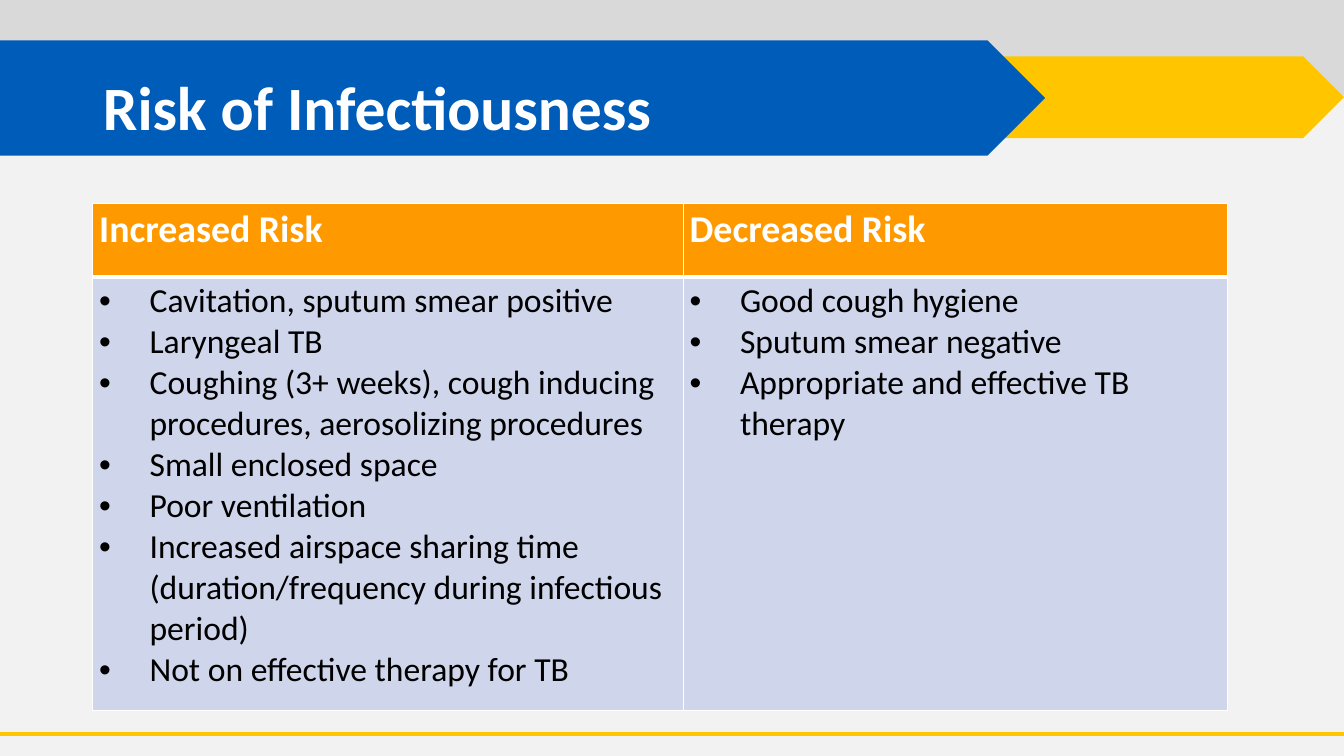
from lxml.etree import SubElement
from pptx import Presentation
from pptx.dml.color import RGBColor
from pptx.enum.shapes import MSO_CONNECTOR, MSO_SHAPE
from pptx.enum.text import MSO_ANCHOR, PP_ALIGN
from pptx.oxml.ns import qn
from pptx.util import Cm, Pt

COLORS = {
    "page": "F2F2F2", "band": "D9D9D9", "gold": "FFC600", "blue": "005CB9",
    "header": "FF9900", "body": "CFD5EA", "white": "FFFFFF", "black": "000000",
}
FONT = "Calibri"
WIDTH, HEIGHT = 33.87, 19.05
RISKS = {
    "Increased Risk": [
        "Cavitation, sputum smear positive",
        "Laryngeal TB",
        "Coughing (3+ weeks), cough inducing procedures, aerosolizing procedures",
        "Small enclosed space",
        "Poor ventilation",
        "Increased airspace sharing time (duration/frequency during infectious period)",
        "Not on effective therapy for TB",
    ],
    "Decreased Risk": [
        "Good cough hygiene",
        "Sputum smear negative",
        "Appropriate and effective TB therapy",
    ],
}


def rgb(name):
    return RGBColor.from_string(COLORS[name])


def add_span(para, text, size, color, bold=False):
    span = para.add_run()
    span.text = text
    span.font.name = FONT
    span.font.size = Pt(size)
    span.font.bold = bold
    span.font.color.rgb = rgb(color)


def add_block(page, kind, box, color):
    block = page.shapes.add_shape(kind, *map(Cm, box))
    block.shadow.inherit = False
    block.fill.solid()
    block.fill.fore_color.rgb = rgb(color)
    block.line.fill.background()


def add_banner(page, left, top, width, title):
    """Draw the grey band, the two arrows and the title."""
    add_block(page, MSO_SHAPE.RECTANGLE, (left, top, width, 2.41), "band")
    add_block(page, MSO_SHAPE.PENTAGON, (left + width - 15.87, top + 1.42, 15.87, 2.06), "gold")
    add_block(page, MSO_SHAPE.PENTAGON, (left, top + 1.02, 26.34, 2.9), "blue")

    heading = page.shapes.title
    heading.left, heading.top = Cm(left + 2.34), Cm(top + 1.83)
    heading.width, heading.height = Cm(29.21), Cm(3.68)
    heading.element.getparent().append(heading.element)  # in front of the arrows
    frame = heading.text_frame
    frame.word_wrap = True
    frame.vertical_anchor = MSO_ANCHOR.TOP
    para = frame.paragraphs[0]
    para.alignment = PP_ALIGN.LEFT
    para.line_spacing = 0.9
    add_span(para, title, 44, "white", bold=True)


def add_footer_rule(page, left, top, width):
    rule = page.shapes.add_connector(
        MSO_CONNECTOR.STRAIGHT, Cm(left), Cm(top), Cm(left + width), Cm(top))
    rule.line.color.rgb = rgb("gold")
    rule.line.width = Pt(3)
    SubElement(rule.element.spPr, qn("a:effectLst"))


def style_cell(cell, color, top_width, bottom_width):
    cell.margin_left = cell.margin_right = Cm(0.16)
    cell.margin_top = cell.margin_bottom = Cm(0.08)
    properties = cell._tc.get_or_add_tcPr()
    borders = {"lnL": 1, "lnR": 1, "lnT": top_width, "lnB": bottom_width}
    for side, points in borders.items():
        line = SubElement(properties, qn(f"a:{side}"), w=str(Pt(points)))
        fill = SubElement(line, qn("a:solidFill"))
        SubElement(fill, qn("a:srgbClr"), val=COLORS["white"])
    cell.fill.solid()
    cell.fill.fore_color.rgb = rgb(color)


def add_bullets(frame, items):
    for index, item in enumerate(items):
        para = frame.add_paragraph() if index else frame.paragraphs[0]
        properties = para._p.get_or_add_pPr()
        properties.set("marL", str(Cm(1.27)))
        properties.set("indent", str(-Cm(1.27)))
        SubElement(properties, qn("a:buFont"), typeface="Arial")
        SubElement(properties, qn("a:buChar"), char="•")
        add_span(para, item, 24, "black")


def add_risk_table(page, left, top, widths, heights):
    box = map(Cm, (left, top, sum(widths), sum(heights)))
    table = page.shapes.add_table(2, len(RISKS), *box).table
    for row, height in zip(table.rows, heights):
        row.height = Cm(height)
    for index, (heading, items) in enumerate(RISKS.items()):
        table.columns[index].width = Cm(widths[index])
        header, body = table.cell(0, index), table.cell(1, index)
        style_cell(header, "header", 1, 3)
        style_cell(body, "body", 3, 1)
        add_span(header.text_frame.paragraphs[0], heading, 27, "white", bold=True)
        add_bullets(body.text_frame, items)


def main():
    deck = Presentation()
    deck.slide_width, deck.slide_height = Cm(WIDTH), Cm(HEIGHT)
    page = deck.slides.add_slide(deck.slide_layouts[5])
    page.background.fill.solid()
    page.background.fill.fore_color.rgb = rgb("page")
    add_banner(page, 0, 0, WIDTH, "Risk of Infectiousness")
    add_footer_rule(page, 0, 18.49, WIDTH)
    add_risk_table(page, 2.34, 5.13, (14.88, 13.72), (1.85, 10.92))
    deck.save("out.pptx")


if __name__ == "__main__":
    main()
